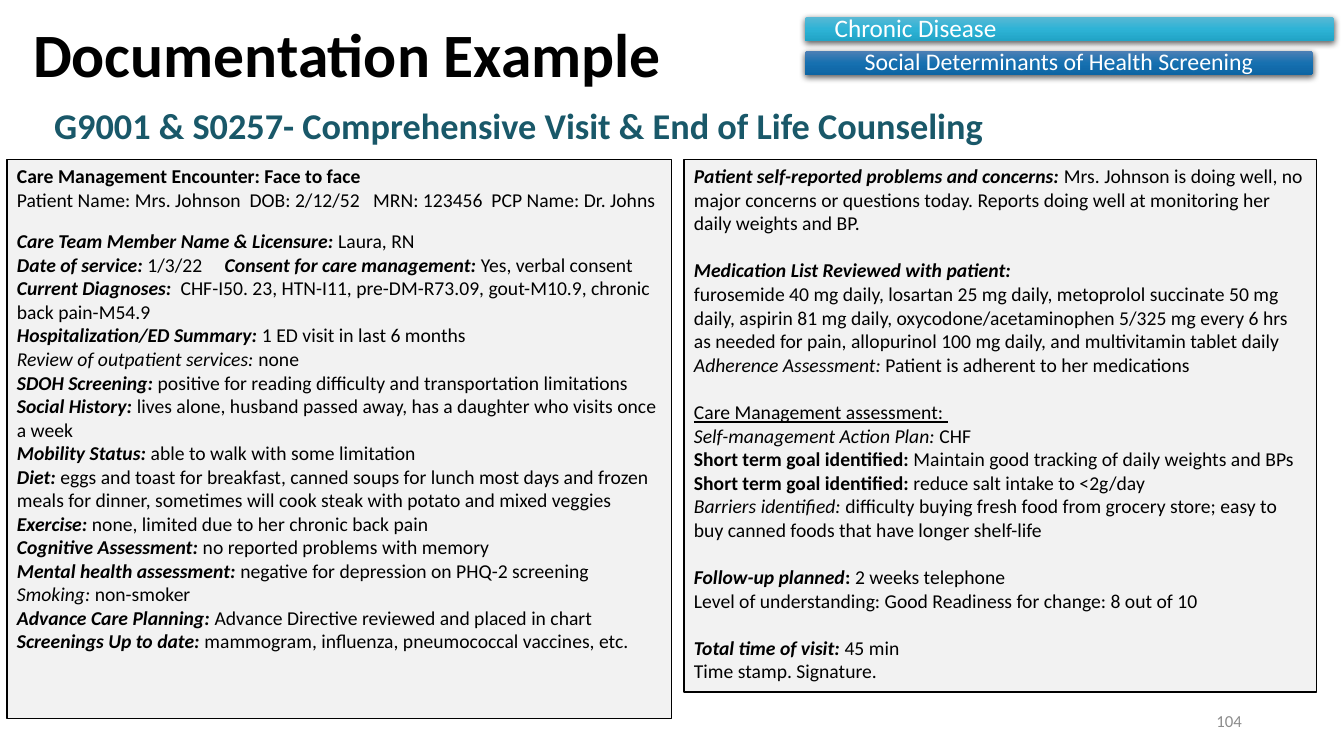
import copy

import pptx
import pptx.dml.color
import pptx.enum.shapes
import pptx.enum.text
import pptx.oxml
import pptx.oxml.ns
import pptx.util

TITLE = "Documentation Example"
SUBTITLE = "G9001 & S0257- Comprehensive Visit & End of Life Counseling"
PAGE_NUMBER = "104"

# Each panel is a list of sections, each section a list of paragraphs,
# each paragraph a list of (style, text) runs: b bold, i italic, u underlined.
ENCOUNTER = [
    [
        [("b", "Care Management Encounter: Face to face")],
        [("", "Patient Name: Mrs. Johnson  DOB: 2/12/52   MRN: 123456  PCP Name: Dr. Johns")],
    ],
    [
        [("bi", "Care Team Member Name & Licensure: "), ("", "Laura, RN")],
        [("bi", "Date of service: "), ("", "1/3/22     "),
         ("bi", "Consent for care management: "), ("", "Yes, verbal consent")],
        [("bi", "Current Diagnoses:  "),
         ("", "CHF-I50. 23, HTN-I11, pre-DM-R73.09, gout-M10.9, chronic back pain-M54.9")],
        [("bi", "Hospitalization/ED Summary: "), ("", "1 ED visit in last 6 months")],
        [("i", "Review of outpatient services: "), ("", "none")],
        [("bi", "SDOH Screening: "),
         ("", "positive for reading difficulty and transportation limitations")],
        [("bi", "Social History: "),
         ("", "lives alone, husband passed away, has a daughter who visits once a week")],
        [("bi", "Mobility Status: "), ("", "able to walk with some limitation")],
        [("bi", "Diet: "),
         ("", "eggs and toast for breakfast, canned soups for lunch most days and frozen "
              "meals for dinner, sometimes will cook steak with potato and mixed veggies")],
        [("bi", "Exercise: "), ("", "none, limited due to her chronic back pain")],
        [("bi", "Cognitive Assessment: "), ("", "no reported problems with memory")],
        [("bi", "Mental health assessment: "),
         ("", "negative for depression on PHQ-2 screening")],
        [("i", "Smoking: "), ("", "non-smoker")],
        [("bi", "Advance Care Planning: "),
         ("", "Advance Directive reviewed and placed in chart")],
        [("bi", "Screenings Up to date: "),
         ("", "mammogram, influenza, pneumococcal vaccines, etc.")],
    ],
]
CARE_PLAN = [
    [
        [("bi", "Patient self-reported problems and concerns: "),
         ("", "Mrs. Johnson is doing well, no major concerns or questions today. "
              "Reports doing well at monitoring her daily weights and BP.")],
    ],
    [
        [("bi", "Medication List Reviewed with patient:")],
        [("", "furosemide 40 mg daily, losartan 25 mg daily, metoprolol succinate 50 mg daily, "
              "aspirin 81 mg daily, oxycodone/acetaminophen 5/325 mg every 6 hrs as needed for "
              "pain, allopurinol 100 mg daily, and multivitamin tablet daily")],
        [("i", "Adherence Assessment: "), ("", "Patient is adherent to her medications")],
    ],
    [
        [("u", "Care Management assessment: ")],
        [("i", "Self-management Action Plan: "), ("", "CHF")],
        [("b", "Short term goal identified: "),
         ("", "Maintain good tracking of daily weights and BPs")],
        [("b", "Short term goal identified: "), ("", "reduce salt intake to <2g/day")],
        [("i", "Barriers identified: "),
         ("", "difficulty buying fresh food from grocery store; "
              "easy to buy canned foods that have longer shelf-life")],
    ],
    [
        [("bi", "Follow-up planned"), ("b", ": "), ("", "2 weeks telephone")],
        [("", "Level of understanding: Good Readiness for change: 8 out of 10")],
    ],
    [
        [("bi", "Total time of visit: "), ("", "45 min")],
        [("", "Time stamp. Signature.")],
    ],
]
ALIGN = pptx.enum.text.PP_ALIGN
ANCHOR = pptx.enum.text.MSO_ANCHOR
SHAPE = pptx.enum.shapes.MSO_SHAPE
# sections, box in px, gap between sections in points
PANELS = [
    (ENCOUNTER, (7, 159, 665, 560), 13),
    (CARE_PLAN, (684, 159, 633, 533), 17),
]
# text, box in px, size in points, alignment, gradient from top to bottom
TOPICS = [
    ("Chronic Disease", (805, 17, 529, 24), 18, ALIGN.LEFT, ("aqua 1", "aqua 2", "aqua 3")),
    ("Social Determinants of Health Screening", (805, 51, 508, 24), 17, ALIGN.CENTER,
     ("blue 1", "blue 2", "blue 3")),
]
COLORS = {
    "ink": "000000", "heading": "195869", "number": "8C8C8C", "white": "FFFFFF",
    "panel": "F2F2F2",
    "aqua 1": "59B8D4", "aqua 2": "2EB3D6", "aqua 3": "21A4C6",
    "blue 1": "4E80B5", "blue 2": "1670B0", "blue 3": "0D65A3",
}
FONT = "Calibri"
EMU_PER_PX = 914400 / 100.8


def px(length):
    return pptx.util.Emu(round(length * EMU_PER_PX))


def color(name):
    return pptx.dml.color.RGBColor.from_string(COLORS[name])


def place(shape, box):
    shape.left, shape.top, shape.width, shape.height = map(px, box)


def frame_of(shape, anchor):
    frame = shape.text_frame
    frame.word_wrap = True
    frame.auto_size = pptx.enum.text.MSO_AUTO_SIZE.NONE
    frame.vertical_anchor = anchor
    return frame


def add_run(paragraph, text, size, ink, style=""):
    run = paragraph.add_run()
    run.text = text
    font = run.font
    font.name, font.size, font.color.rgb = FONT, pptx.util.Pt(size), color(ink)
    font.bold, font.italic, font.underline = (mark in style for mark in "biu")


def add_panel(slide, sections, box, gap):
    panel = slide.shapes.add_shape(SHAPE.RECTANGLE, *map(px, box))
    panel.shadow.inherit = False
    panel.fill.solid()
    panel.fill.fore_color.rgb = color("panel")
    panel.line.color.rgb = color("ink")
    panel.line.width = pptx.util.Pt(0.75)
    frame = frame_of(panel, ANCHOR.TOP)
    for s, section in enumerate(sections):
        for p, runs in enumerate(section):
            paragraph = frame.add_paragraph() if s or p else frame.paragraphs[0]
            paragraph.alignment = ALIGN.LEFT
            if s and not p:
                paragraph.space_before = pptx.util.Pt(gap)
            for style, text in runs:
                add_run(paragraph, text, 14, "ink", style)


def fill_gradient(shape, names):
    """Fill from top to bottom with three evenly spaced colours."""
    shape.fill.gradient()
    shape.fill.gradient_angle = 270
    first = shape.element.spPr.find(".//" + pptx.oxml.ns.qn("a:gs"))
    first.addnext(copy.deepcopy(first))
    for i, (stop, name) in enumerate(zip(shape.fill.gradient_stops, names)):
        stop.position = i / 2
        stop.color.rgb = color(name)


def add_drop_shadow(shape):
    shape.shadow.inherit = False
    shape.element.spPr.find(pptx.oxml.ns.qn("a:effectLst")).append(pptx.oxml.parse_xml(
        f'<a:outerShdw {pptx.oxml.ns.nsdecls("a")} blurRad="57150" dist="19050" dir="5400000" '
        f'algn="ctr" rotWithShape="0"><a:srgbClr val="{COLORS["ink"]}">'
        '<a:alpha val="63000"/></a:srgbClr></a:outerShdw>'))


def add_topic(slide, text, box, size, alignment, gradient):
    bar = slide.shapes.add_shape(SHAPE.ROUNDED_RECTANGLE, *map(px, box))
    bar.adjustments[0] = 0.1
    fill_gradient(bar, gradient)
    bar.line.fill.background()
    add_drop_shadow(bar)
    frame = frame_of(bar, ANCHOR.MIDDLE)
    frame.margin_left = frame.margin_right = px(29)
    frame.margin_top = frame.margin_bottom = 0
    label = frame.paragraphs[0]
    label.alignment, label.line_spacing = alignment, 0.9
    add_run(label, text, size, "white")


def main():
    prs = pptx.Presentation()
    prs.slide_width, prs.slide_height = px(1344), px(756)
    slide = prs.slides.add_slide(prs.slide_layouts[1])

    title = slide.shapes.title
    place(title, (23, 17, 796, 82))
    heading = frame_of(title, ANCHOR.MIDDLE).paragraphs[0]
    heading.alignment, heading.line_spacing = ALIGN.LEFT, 0.9
    add_run(heading, TITLE, 44, "ink", "b")

    body = slide.placeholders[1]
    place(body, (20, 91, 998, 61))
    subtitle = frame_of(body, ANCHOR.BOTTOM).paragraphs[0]
    properties = subtitle._p.get_or_add_pPr()
    properties.set("marL", "0")
    properties.set("indent", "0")
    properties.append(pptx.oxml.parse_xml(f'<a:buNone {pptx.oxml.ns.nsdecls("a")}/>'))
    subtitle.alignment, subtitle.space_before = ALIGN.CENTER, pptx.util.Pt(0)
    add_run(subtitle, SUBTITLE, 25.9, "heading", "b")

    number_box = slide.shapes.add_textbox(*map(px, (950, 701, 302, 40)))
    number = frame_of(number_box, ANCHOR.MIDDLE).paragraphs[0]
    number.alignment = ALIGN.RIGHT
    add_run(number, PAGE_NUMBER, 12, "number")

    for panel in PANELS:
        add_panel(slide, *panel)
    for topic in TOPICS:
        add_topic(slide, *topic)
    prs.save("out.pptx")


if __name__ == "__main__":
    main()
